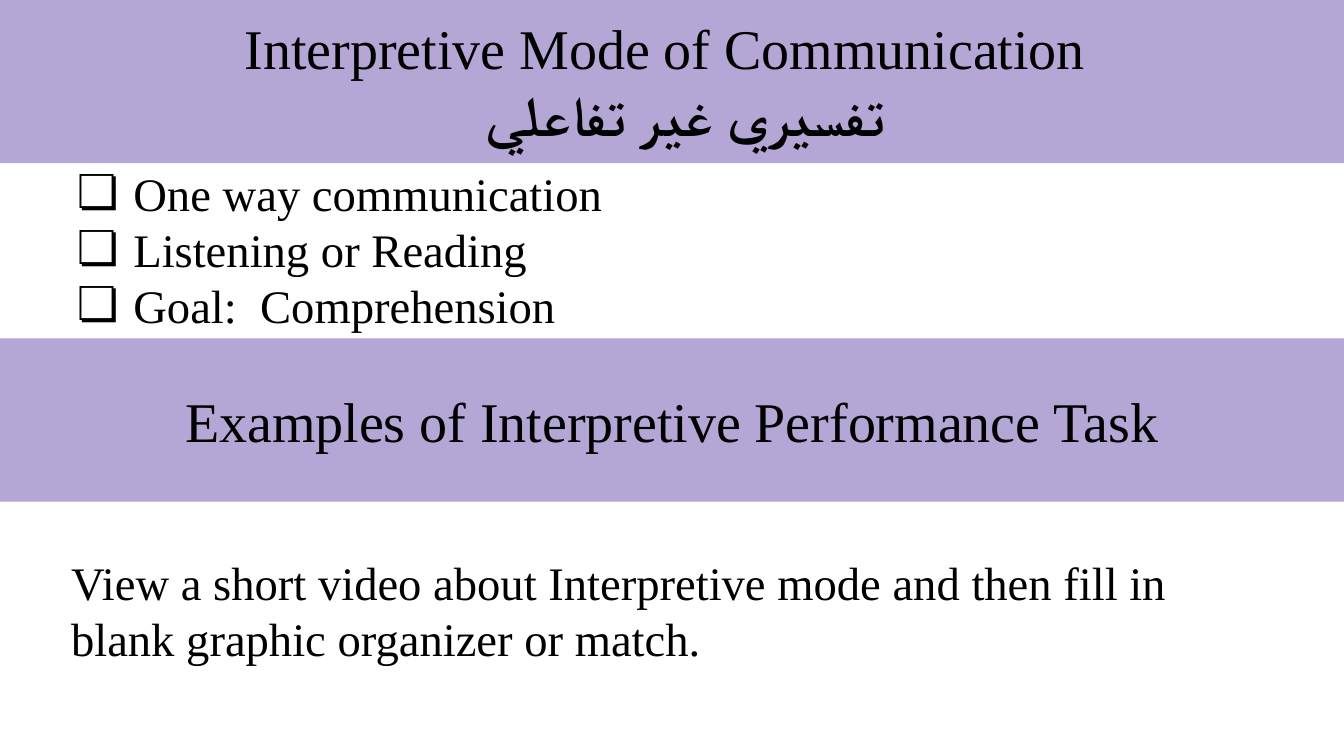
"""Build the slide on the interpretive mode of communication."""
import pptx
import pptx.dml.color
import pptx.enum.shapes
import pptx.enum.text
import pptx.oxml.ns
import pptx.util
from lxml import etree

Cm, Pt = pptx.util.Cm, pptx.util.Pt
Anchor = pptx.enum.text.MSO_ANCHOR
Align = pptx.enum.text.PP_ALIGN

WIDE, HIGH = 33.87, 19.05
FONT, INK, LILAC = "Times New Roman", "000000", "B4A7D6"
BAND = 4.11

HEAD = ["Interpretive Mode of Communication ", "تفسيري غير تفاعلي"]
MODES = ["One way communication", "Listening or Reading", "Goal:  Comprehension"]
TOPIC = ["Examples of Interpretive Performance Task"]
TASK = ["View a short video about Interpretive mode and then fill in "
        "blank graphic organizer or match."]

HEADING = {"size": Pt(40), "name": FONT, "bold": False}
PLAIN = {"size": Pt(33.3), "name": FONT, "bold": False}
FRAME = {"word_wrap": True, "auto_size": pptx.enum.text.MSO_AUTO_SIZE.NONE,
         "margin_left": Cm(0.34), "margin_right": Cm(0.34),
         "margin_top": Cm(0.34), "margin_bottom": Cm(0.34)}
SPACE = {"line_spacing": 1.0, "space_before": Pt(0), "space_after": Pt(0)}


def color(code):
    return pptx.dml.color.RGBColor.from_string(code)


def apply(item, values):
    for name, value in values.items():
        setattr(item, name, value)


def add(parent, tag, **values):
    etree.SubElement(parent, pptx.oxml.ns.qn(tag), **values)


def indent(para, left, first, mark=None):
    props = para._p.get_or_add_pPr()
    props.set("marL", str(Cm(left)))
    props.set("indent", str(Cm(first)))
    if mark:
        add(props, "a:buChar", char=mark)
    else:
        add(props, "a:buNone")


def place(shape, box, lines, style, align, anchor=Anchor.TOP, mark=None, shift=0):
    apply(shape, dict(zip(("left", "top", "width", "height"), map(Cm, box))))
    frame = shape.text_frame
    apply(frame, {**FRAME, "vertical_anchor": anchor})
    for i, line in enumerate(lines):
        para = frame.add_paragraph() if i else frame.paragraphs[0]
        apply(para, {**SPACE, "alignment": align})
        indent(para, 1.7 if mark else shift * i, -1.42 if mark else 0, mark)
        run = para.add_run()
        run.text = line
        apply(run.font, style)
        run.font.color.rgb = color(INK)
        add(run._r.get_or_add_rPr(), "a:cs", typeface=FONT)
    return frame.paragraphs


def paint(shape):
    shape.fill.solid()
    shape.fill.fore_color.rgb = color(LILAC)
    shape.line.fill.background()


def main():
    deck = pptx.Presentation()
    apply(deck, {"slide_width": Cm(WIDE), "slide_height": Cm(HIGH)})
    slide = deck.slides.add_slide(deck.slide_layouts[3])
    title, modes, task = slide.placeholders
    topic = slide.shapes.add_shape(
        pptx.enum.shapes.MSO_SHAPE.RECTANGLE, 0, 0, Cm(WIDE), Cm(BAND))
    topic.shadow.inherit = False
    for band in (title, topic):
        paint(band)

    paras = place(title, (0, 0, WIDE, BAND), HEAD, HEADING, Align.CENTER, shift=0.66)
    paras[1].runs[0].font.bold = True
    place(modes, (1.32, 3.81, 19.23, 4.95), MODES, PLAIN, Align.LEFT, mark="❏")
    place(topic, (0, 8.53, WIDE, BAND), TOPIC, HEADING, Align.CENTER, Anchor.MIDDLE)
    place(task, (1.45, 13.61, 30.96, 3.53), TASK, PLAIN, Align.LEFT)
    deck.save("out.pptx")


if __name__ == "__main__":
    main()
